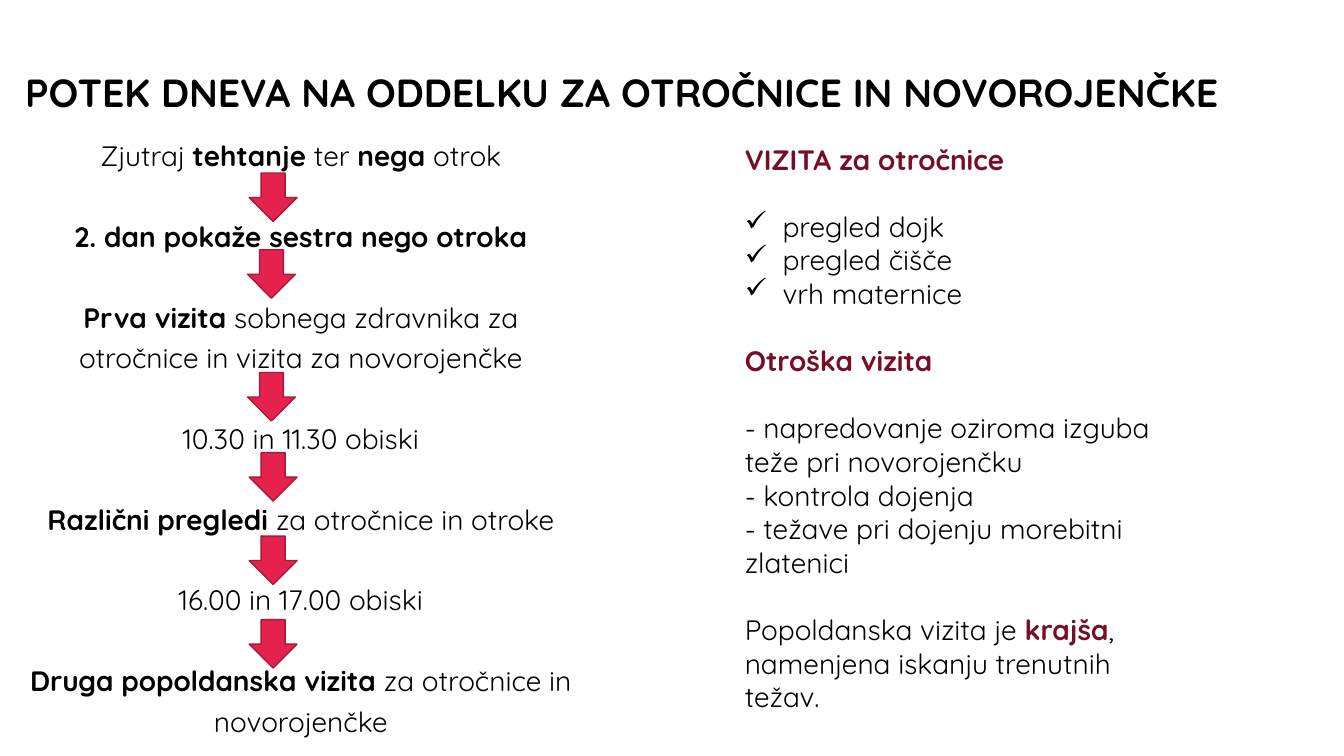
from dataclasses import dataclass

import pptx
import pptx.dml.color
import pptx.enum.shapes
import pptx.enum.text
import pptx.oxml
import pptx.oxml.ns
import pptx.util

Pt = pptx.util.Pt
FONT = "Quicksand"
BLACK = "000000"
WINE = "760E25"
ARROW_FILL = "E5224E"
ARROW_LINE = "A9193A"
BULLET_INDENT = 27


@dataclass(frozen=True)
class Segment:
    text: str
    bold: bool = False
    color: str = BLACK


@dataclass(frozen=True)
class Line:
    segments: tuple[Segment, ...]
    gap: float = 0
    bullet: bool = False


@dataclass(frozen=True)
class TextBlock:
    left: float
    top: float
    width: float
    height: float
    lines: tuple[Line, ...]
    size: float = 20
    spacing: float = 1.0
    centered: bool = False
    middle: bool = False
    bottom_inset: float = 3.6


@dataclass(frozen=True)
class Arrow:
    left: float
    top: float


def plain(text: str) -> Segment:
    return Segment(text)


def bold(text: str) -> Segment:
    return Segment(text, bold=True)


def accent(text: str) -> Segment:
    return Segment(text, bold=True, color=WINE)


def rgb(value: str) -> pptx.dml.color.RGBColor:
    return pptx.dml.color.RGBColor.from_string(value)


def add_bullet(paragraph) -> None:
    properties = paragraph._p.get_or_add_pPr()
    properties.set("marL", str(Pt(BULLET_INDENT)))
    properties.set("indent", str(-Pt(BULLET_INDENT)))
    namespace = pptx.oxml.ns.nsdecls("a")
    properties.append(pptx.oxml.parse_xml(f'<a:buChar {namespace} char="✓"/>'))


def add_text_block(slide, block: TextBlock) -> None:
    shape = slide.shapes.add_textbox(
        Pt(block.left), Pt(block.top), Pt(block.width), Pt(block.height)
    )
    frame = shape.text_frame
    frame.word_wrap = True
    frame.margin_bottom = Pt(block.bottom_inset)
    if block.middle:
        frame.vertical_anchor = pptx.enum.text.MSO_ANCHOR.MIDDLE
    for index, line in enumerate(block.lines):
        paragraph = frame.add_paragraph() if index else frame.paragraphs[0]
        paragraph.line_spacing = block.spacing
        paragraph.space_before = Pt(line.gap)
        if block.centered:
            paragraph.alignment = pptx.enum.text.PP_ALIGN.CENTER
        if line.bullet:
            add_bullet(paragraph)
        for segment in line.segments:
            run = paragraph.add_run()
            run.text = segment.text
            run.font.name = FONT
            run.font.size = Pt(block.size)
            run.font.bold = segment.bold
            run.font.color.rgb = rgb(segment.color)


def add_arrow(slide, arrow: Arrow) -> None:
    shape = slide.shapes.add_shape(
        pptx.enum.shapes.MSO_SHAPE.DOWN_ARROW,
        Pt(arrow.left), Pt(arrow.top), Pt(34.2), Pt(34.6),
    )
    shape.shadow.inherit = False
    shape.fill.solid()
    shape.fill.fore_color.rgb = rgb(ARROW_FILL)
    shape.line.color.rgb = rgb(ARROW_LINE)
    shape.line.width = Pt(1)


STEP_SEGMENTS = (
    (plain("Zjutraj "), bold("tehtanje "), plain("ter "), bold("nega "), plain("otrok")),
    (bold("2. dan pokaže sestra nego otroka"),),
    (bold("Prva vizita "), plain("sobnega zdravnika za otročnice in vizita za novorojenčke")),
    (plain("10.30 in 11.30 obiski"),),
    (bold("Različni pregledi "), plain("za otročnice in otroke")),
    (plain("16.00 in 17.00 obiski"),),
    (bold("Druga popoldanska vizita "), plain("za otročnice in novorojenčke")),
)
STEPS = tuple(
    Line(segments, gap=28.9 if index else 0)
    for index, segments in enumerate(STEP_SEGMENTS)
)

VISITS = (
    Line((accent("VIZITA za otročnice"),)),
    Line((plain("pregled dojk"),), gap=24, bullet=True),
    Line((plain("pregled čišče"),), bullet=True),
    Line((plain("vrh maternice"),), bullet=True),
    Line((accent("Otroška vizita"),), gap=24),
    Line((plain("- napredovanje oziroma izguba teže pri novorojenčku"),), gap=24),
    Line((plain("- kontrola dojenja"),)),
    Line((plain("- težave pri dojenju morebitni zlatenici"),)),
    Line(
        (
            plain("Popoldanska vizita je "),
            accent("krajša"),
            plain(", namenjena iskanju trenutnih težav."),
        ),
        gap=24,
    ),
)

TITLE = (Line((bold("POTEK DNEVA NA ODDELKU ZA OTROČNICE IN NOVOROJENČKE"),)),)

BLOCKS = (
    TextBlock(10.8, 43.2, 928, 80, TITLE, size=28, spacing=0.9, middle=True, bottom_inset=34),
    TextBlock(10.8, 90.7, 408.2, 444.2, STEPS, spacing=1.2, centered=True),
    TextBlock(524.9, 97.9, 327.6, 443.5, VISITS),
)

ARROWS = (
    Arrow(178, 123.6),
    Arrow(176.8, 178.4),
    Arrow(176.8, 266.1),
    Arrow(178, 323.3),
    Arrow(178, 382.9),
    Arrow(178, 442.6),
)


def main() -> None:
    presentation = pptx.Presentation()
    presentation.slide_width = Pt(960)
    presentation.slide_height = Pt(540)
    slide = presentation.slides.add_slide(presentation.slide_layouts[6])
    for block in BLOCKS:
        add_text_block(slide, block)
    for arrow in ARROWS:
        add_arrow(slide, arrow)
    presentation.save("out.pptx")


if __name__ == "__main__":
    main()
